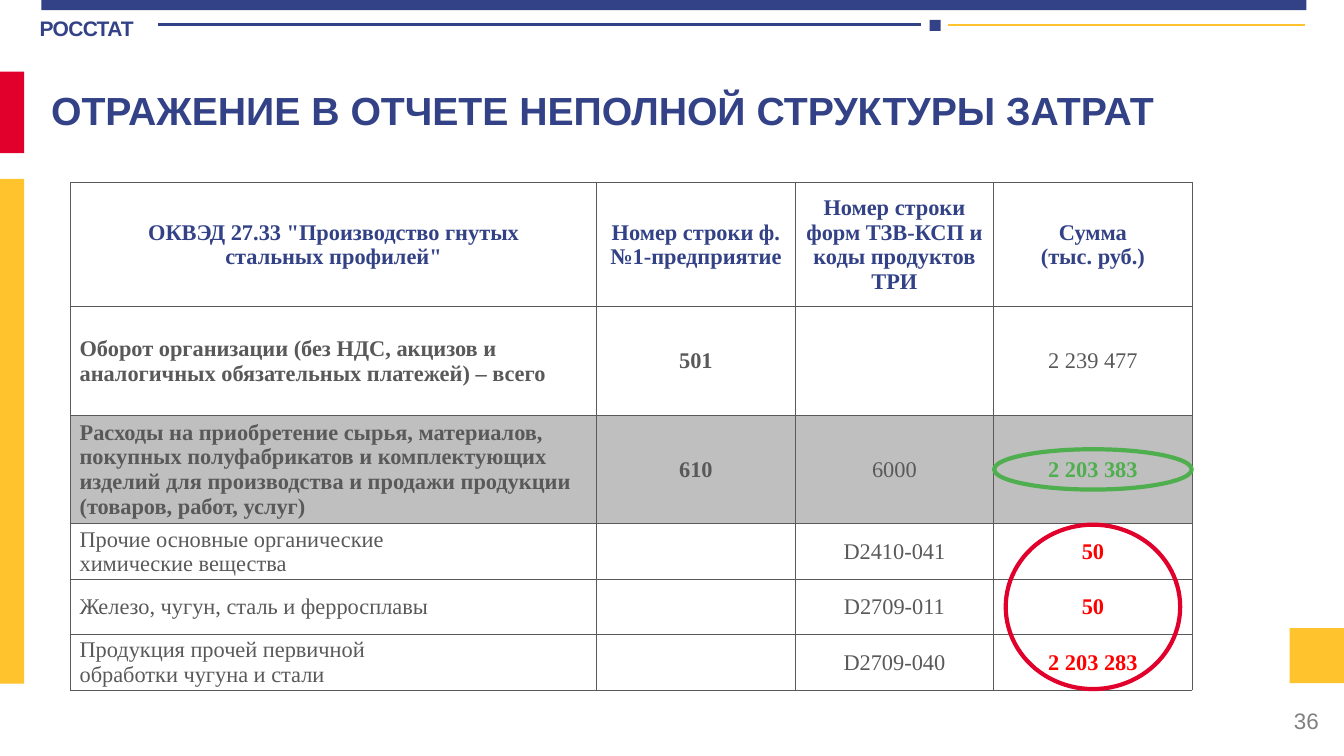
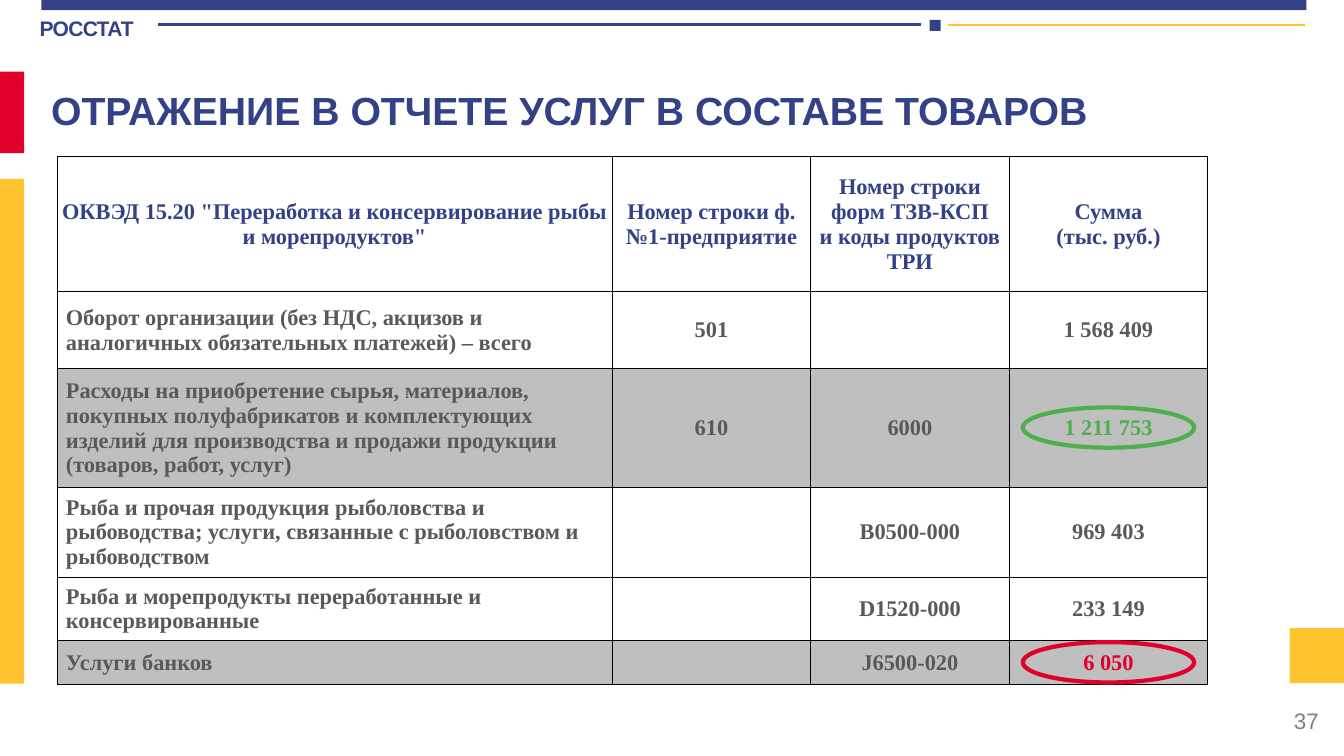
from dataclasses import dataclass

from lxml.etree import SubElement
from pptx import Presentation
from pptx.dml.color import RGBColor
from pptx.enum.shapes import MSO_CONNECTOR as Connector, MSO_SHAPE as Shape
from pptx.enum.text import MSO_ANCHOR as Anchor, PP_ALIGN as Align
from pptx.oxml.ns import qn
from pptx.util import Pt

COLORS = {
    "navy": "334286",
    "crimson": "E1002B",
    "yellow": "FFC32E",
    "grey": "808080",
    "body": "595959",
    "black": "000000",
    "shade": "BFBFBF",
    "green": "4FAF4F",
    "red": "FF0000",
}
FONTS = {
    "brand": {"name": "Arial", "size": Pt(15), "bold": True},
    "title": {"name": "Arial", "size": Pt(28), "bold": True},
    "number": {"name": "Arial", "size": Pt(16), "bold": False},
    "table": {"name": "Times New Roman", "size": Pt(16)},
}
NO_MARGINS = {"margin_left": 0, "margin_top": 0, "margin_right": 0, "margin_bottom": 0}
CELL_MARGINS = {"margin_left": Pt(0.7), "margin_top": Pt(0.7),
                "margin_right": Pt(0.7), "margin_bottom": 0}
NAME_INDENT = Pt(6.5)
CODE_WIDTH = 141.8
ALL_COLUMNS = (0, 1, 2, 3)
TITLE_BOX = (29.5, 56.2, 892, 44)
NUMBER_BOX = (733, 500.4, 216, 28.8)
BRAND_BOX = (28.4, 11, 83, 23)
BLOCKS = [
    ((29.5, 0, 903.6, 7.2), "navy"),
    ((0, 51.1, 17.3, 58.3), "crimson"),
    ((0, 127.7, 17.3, 360.6), "yellow"),
    ((921.2, 448.6, 38.8, 39.4), "yellow"),
    ((664, 14.2, 8, 8), "navy"),
]
RULES = [(113.2, 658.2, "navy", 2), (677, 932.4, "yellow", 1.5)]
RULE_TOP = 17.8


@dataclass
class Row:
    height: float
    texts: tuple
    bold: tuple = ALL_COLUMNS
    color: str = "body"
    sum_color: str = "body"
    shaded: bool = False


@dataclass
class Mark:
    """An oval centred on the sum column over rows first to last."""
    first: int
    last: int
    width: float
    height: float
    color: str


def rgb(name):
    return RGBColor.from_string(COLORS[name])


def points(box):
    return [Pt(value) for value in box]


def apply(target, values):
    for name, value in values.items():
        setattr(target, name, value)


def write(frame, text, font, color, align=Align.LEFT):
    frame.text = text
    for paragraph in frame.paragraphs:
        paragraph.alignment = align
        for run in paragraph.runs:
            apply(run.font, font)
            run.font.color.rgb = rgb(color)


def add_text(slide, box, text, font, color, align=Align.LEFT, **layout):
    frame = slide.shapes.add_textbox(*points(box)).text_frame
    apply(frame, {"word_wrap": True, "vertical_anchor": Anchor.MIDDLE, **layout})
    write(frame, text, FONTS[font], color, align)
    return frame


def add_block(slide, box, color):
    shape = slide.shapes.add_shape(Shape.RECTANGLE, *points(box))
    shape.shadow.inherit = False
    shape.fill.solid()
    shape.fill.fore_color.rgb = rgb(color)
    shape.line.fill.background()


def add_rule(slide, left, right, color, width):
    ends = points((left, RULE_TOP, right, RULE_TOP))
    connector = slide.shapes.add_connector(Connector.STRAIGHT, *ends)
    connector.line.color.rgb = rgb(color)
    connector.line.width = Pt(width)
    SubElement(connector._element.spPr, qn("a:effectLst"))


def add_oval(slide, box, color):
    oval = slide.shapes.add_shape(Shape.OVAL, *points(box))
    oval.shadow.inherit = False
    oval.fill.background()
    oval.line.color.rgb = rgb(color)
    oval.line.width = Pt(3)


def add_frame(slide, title, number):
    """Place the bands, the header, the title and the page number."""
    for box, color in BLOCKS:
        add_block(slide, box, color)
    for rule in RULES:
        add_rule(slide, *rule)
    brand = add_text(slide, BRAND_BOX, "РОССТАТ", "brand", "navy",
                     vertical_anchor=Anchor.TOP, **NO_MARGINS)
    brand.paragraphs[0].runs[0]._r.get_or_add_rPr().set("spc", "-50")
    add_text(slide, TITLE_BOX, title, "title", "navy")
    add_text(slide, NUMBER_BOX, str(number), "number", "grey", Align.RIGHT)


def set_borders(cell, color):
    properties = cell._tc.get_or_add_tcPr()
    for side in ("a:lnL", "a:lnR", "a:lnT", "a:lnB"):
        line = SubElement(properties, qn(side), w=str(Pt(0.5)))
        fill = SubElement(line, qn("a:solidFill"))
        SubElement(fill, qn("a:srgbClr"), val=COLORS[color])


def fill_cell(cell, row, column, is_header, border):
    is_name = column == 0 and not is_header
    apply(cell, {**CELL_MARGINS, "vertical_anchor": Anchor.MIDDLE})
    if is_name:
        cell.margin_left = NAME_INDENT
    set_borders(cell, border)
    if row.shaded:
        cell.fill.solid()
        cell.fill.fore_color.rgb = rgb("shade")
    else:
        cell.fill.background()
    color = row.sum_color if column == 3 and not is_header else row.color
    font = {**FONTS["table"], "bold": column in row.bold}
    align = Align.LEFT if is_name else Align.CENTER
    if row.texts[column]:
        write(cell.text_frame, row.texts[column], font, color, align)


def add_cost_table(slide, left, top, name_width, rows, border):
    widths = [name_width] + [CODE_WIDTH] * 3
    height = sum(row.height for row in rows)
    box = points((left, top, sum(widths), height))
    table = slide.shapes.add_table(len(rows), len(widths), *box).table
    apply(table, {"first_row": False, "horz_banding": False})
    for column, width in enumerate(widths):
        table.columns[column].width = Pt(width)
    for index, row in enumerate(rows):
        table.rows[index].height = Pt(row.height)
        for column in ALL_COLUMNS:
            fill_cell(table.cell(index, column), row, column, index == 0, border)


def add_marks(slide, left, top, name_width, rows, marks):
    center = left + name_width + 2.5 * CODE_WIDTH
    for mark in marks:
        start = top + sum(row.height for row in rows[:mark.first])
        end = top + sum(row.height for row in rows[:mark.last + 1])
        add_oval(slide, (center - mark.width / 2, (start + end - mark.height) / 2,
                         mark.width, mark.height), mark.color)


def add_report_slide(presentation, title, number, place, border, rows, marks):
    """place holds the left, top and first column width of the table."""
    slide = presentation.slides.add_slide(presentation.slide_layouts[6])
    add_frame(slide, title, number)
    add_cost_table(slide, *place, rows, border)
    add_marks(slide, *place, rows, marks)


TURNOVER = ("Оборот организации (без НДС, акцизов и аналогичных "
            "обязательных платежей) – всего")
EXPENSES = ("Расходы на приобретение сырья, материалов, покупных полуфабрикатов "
            "и комплектующих изделий для производства и продажи продукции "
            "(товаров, работ, услуг)")
LINE_HEADER = "Номер строки ф.№1-предприятие"
SUM_HEADER = "Сумма\n(тыс. руб.)"

REPORTS = [
    {
        "title": "ОТРАЖЕНИЕ В ОТЧЕТЕ НЕПОЛНОЙ СТРУКТУРЫ ЗАТРАТ",
        "number": 36,
        "place": (50.4, 130.3, 375.8),
        "border": "body",
        "rows": [
            Row(88.6, ('ОКВЭД 27.33 "Производство гнутых\nстальных профилей"', LINE_HEADER,
                       "Номер строки форм ТЗВ-КСП и коды продуктов ТРИ", SUM_HEADER),
                color="navy"),
            Row(77.6, (TURNOVER, "501", "", "2 239 477"), bold=(0, 1)),
            Row(77.6, (EXPENSES, "610", "6000", "2 203 383"), bold=(0, 1, 3),
                sum_color="green", shaded=True),
            Row(39.6, ("Прочие основные органические\nхимические вещества", "",
                       "D2410-041", "50"), bold=(3,), sum_color="red"),
            Row(39.6, ("Железо, чугун, сталь и ферросплавы", "", "D2709-011", "50"),
                bold=(3,), sum_color="red"),
            Row(39.6, ("Продукция прочей первичной\nобработки чугуна и стали", "",
                       "D2709-040", "2 203 283"), bold=(3,), sum_color="red"),
        ],
        "marks": [Mark(3, 5, 124.6, 117.4, "crimson"), Mark(2, 2, 141.1, 28.8, "green")],
    },
    {
        "title": "ОТРАЖЕНИЕ В ОТЧЕТЕ УСЛУГ В СОСТАВЕ ТОВАРОВ",
        "number": 37,
        "place": (40.6, 111.6, 396.7),
        "border": "black",
        "rows": [
            Row(96.5, ('ОКВЭД 15.20 "Переработка и консервирование рыбы и морепродуктов"',
                       LINE_HEADER, "Номер строки форм ТЗВ-КСП\nи коды продуктов ТРИ",
                       SUM_HEADER), color="navy"),
            Row(54.8, (TURNOVER, "501", "", "1 568 409")),
            Row(85, (EXPENSES, "610", "6000", "1 211 753"), sum_color="green", shaded=True),
            Row(64.2, ("Рыба и прочая продукция рыболовства и рыбоводства; услуги, "
                       "связанные с рыболовством и рыбоводством", "", "B0500-000", "969 403")),
            Row(45.2, ("Рыба и морепродукты переработанные и консервированные", "",
                       "D1520-000", "233 149")),
            Row(31.6, ("Услуги банков", "", "J6500-020", "6 050"),
                sum_color="crimson", shaded=True),
        ],
        "marks": [Mark(5, 5, 122.4, 28.8, "crimson"), Mark(2, 2, 122.4, 28.8, "green")],
    },
]


def main():
    presentation = Presentation()
    apply(presentation, {"slide_width": Pt(960), "slide_height": Pt(540)})
    for report in REPORTS:
        add_report_slide(presentation, **report)
    presentation.save("out.pptx")


if __name__ == "__main__":
    main()
